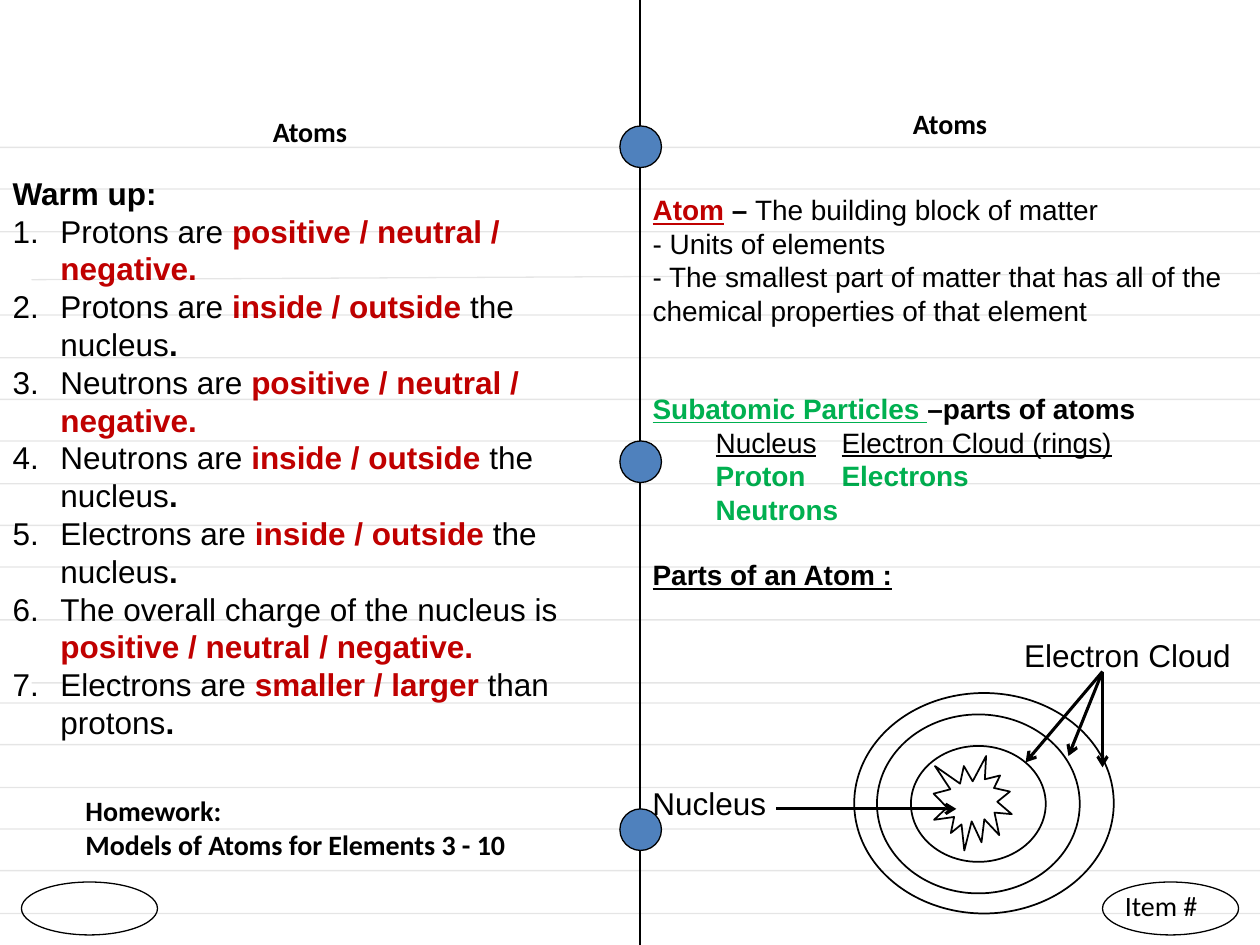
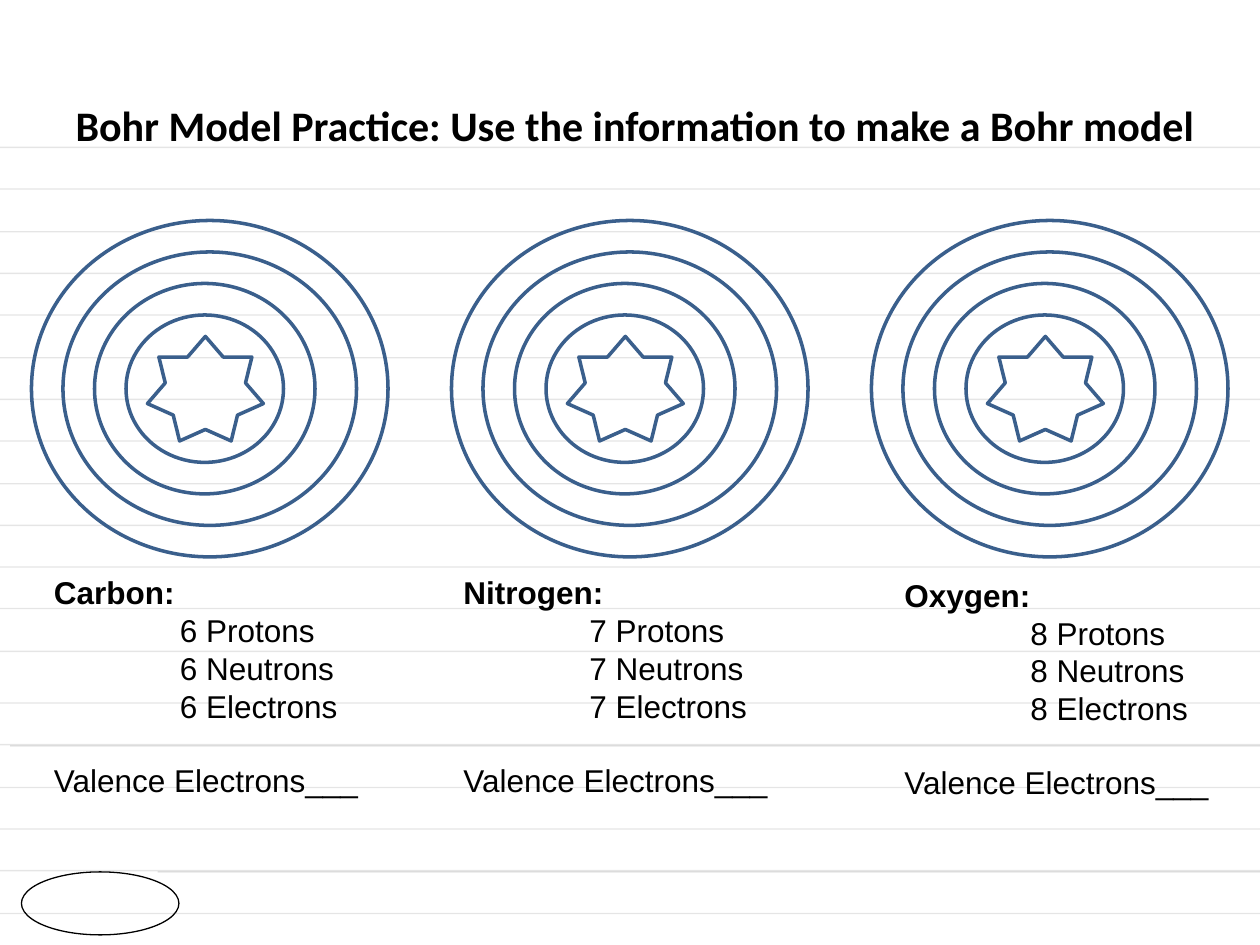
from dataclasses import dataclass

from lxml import etree
from pptx import Presentation
from pptx.dml.color import RGBColor
from pptx.enum import shapes, text
from pptx.oxml import ns
from pptx.util import Inches, Pt


@dataclass(frozen=True)
class Theme:
    ink: str = "000000"
    red: str = "C00000"
    green: str = "00B050"
    hole: str = "4F81BD"
    ring: str = "3A5F8C"
    head: str = "Calibri"
    body: str = "Arial"
    small: int = 16
    large: int = 18
    title: int = 24
    leading: float = 1.15
    thin: float = 0.75


T = Theme()
OVAL = shapes.MSO_SHAPE.OVAL
MID = text.PP_ALIGN.CENTER

# Marks on a run: b bold, u underlined, r red, g green.
# A paragraph is (runs, options); gap counts the blank lines above it.
CHARGE = ("positive / neutral / negative.", "br")
PLACE = [("inside / outside ", "br"), ("the nucleus", ""), (".", "b")]
QUIZ = [
    [("Protons are ", ""), CHARGE],
    [("Protons are ", ""), *PLACE],
    [("Neutrons are ", ""), CHARGE],
    [("Neutrons are ", ""), *PLACE],
    [("Electrons are ", ""), *PLACE],
    [("The overall charge of the nucleus is ", ""), CHARGE],
    [("Electrons are ", ""), ("smaller / larger ", "br"),
     ("than protons", ""), (".", "b")],
]
WARMUP = [([("Warm up:", "b")], {})] + [(q, {"number": True}) for q in QUIZ]
NOTES = [
    ([("Atom", "bur"), (" ", "b"), ("– ", "b"),
      ("The building block of matter", "")], {}),
    ([("- Units of elements", "")], {}),
    ([("- The smallest part of matter that has all of the chemical "
       "properties of that element", "")], {}),
    ([("Subatomic Particles ", "bug"), ("–parts of atoms", "b")], {"gap": 2}),
    ([("\t", ""), ("Nucleus", "u"), ("\t", ""),
      ("Electron Cloud (rings)", "u")], {"tabs": (0.31, 2.06)}),
    ([("\tProton\tElectrons", "bg")], {"tabs": (0.31, 3.0)}),
    ([("\tNeutrons", "bg")], {"tabs": (0.37,)}),
    ([("Parts of an Atom :", "bu")], {"gap": 1}),
]
HOMEWORK = [([("Homework:", "b")], {}),
            ([("Models of Atoms for Elements 3 - 10", "b")], {})]
PRACTICE = "Bohr Model Practice: Use the information to make a Bohr model"

# Name, particles of each kind, left and top of the caption
ELEMENTS = [("Carbon", 6, 0.33, 4.5), ("Nitrogen", 7, 3.58, 4.5),
            ("Oxygen", 8, 7.08, 4.52)]
PARTS = ["Protons", "Neutrons", "Electrons"]

# Notebook rules: evenly spaced rows, and the rows that stray on each slide
STEP = 1 / 3
ROWS = [round(1.17 + n * STEP, 2) for n in range(11)]
ROWS += [round(5.58 + n * STEP, 2) for n in range(6)]
STRAY_NOTES = {2.17: (0.25, 2.22, 10, 2.17), 4.92: (0, 4.92, 10, 4.92),
               5.42: (0.25, 5.42, 10, 5.42)}
STRAY_BOHR = {3.5: (0, 3.5, 9.92, 3.5), 4.83: (0, 4.83, 10, 4.83),
              5.17: (0, 5.17, 10, 5.17), 5.92: (0.08, 5.92, 10, 5.92),
              6.92: (1.25, 6.92, 10, 6.92)}
HOLES = [1, 3.5, 6.42]

ATOM = [(shapes.MSO_SHAPE.EXPLOSION1, (7.41, 6, 0.62, 0.75)),
        (OVAL, (6.96, 5.67, 1.61, 1.42)),
        (OVAL, (7.23, 5.92, 1.07, 0.92)),
        (OVAL, (6.78, 5.5, 2.06, 1.75))]
ARROWS = [(6.16, 6.42, 7.59, 6.42), (8.75, 5.33, 8.14, 6.05),
          (8.75, 5.33, 8.48, 6), (8.75, 5.33, 8.75, 6.09)]
LABELS = [("Nucleus", (5.08, 6.17, 1.16, 0.42)),
          ("Electron Cloud", (8.03, 5, 1.97, 0.4))]

# Inset from the outer ring, width, height
RINGS = [(0.75, 1.25, 1.17), (0.5, 1.75, 1.67),
         (0.25, 2.33, 2.17), (0, 2.83, 2.67)]


def rgb(code):
    return RGBColor.from_string(code)


def plain(words, marks=""):
    return [([(words, marks)], {})]


def write(box, paras, size, font, align=None, left=0):
    """Fill a text box or placeholder, top-anchored, with marked-up paragraphs."""
    frame = box.text_frame
    frame.word_wrap = True
    frame.auto_size = text.MSO_AUTO_SIZE.NONE
    frame.vertical_anchor = text.MSO_ANCHOR.TOP
    for n, (runs, opts) in enumerate(paras):
        para = frame.add_paragraph() if n else frame.paragraphs[0]
        para.alignment = align
        para.space_before = Pt(opts.get("gap", 0) * size * T.leading)
        set_list(para, opts, left)
        for words, marks in runs:
            run = para.add_run()
            run.text = words
            face = run.font
            face.name, face.size = font, Pt(size)
            face.bold, face.underline = "b" in marks, "u" in marks
            face.color.rgb = rgb(T.red if "r" in marks else
                                 T.green if "g" in marks else T.ink)


def set_list(para, opts, left):
    """Set indent, numbering and tab stops."""
    prop = para._p.get_or_add_pPr()
    number = opts.get("number", False)
    hang = 0.38 if number else 0
    prop.set("marL", str(Inches(opts.get("left", left) + hang)))
    prop.set("indent", str(Inches(-hang)))
    if number:
        etree.SubElement(prop, ns.qn("a:buAutoNum"), type="arabicPeriod")
    else:
        etree.SubElement(prop, ns.qn("a:buNone"))
    if "tabs" in opts:
        tabs = etree.SubElement(prop, ns.qn("a:tabLst"))
        for stop in opts["tabs"]:
            etree.SubElement(tabs, ns.qn("a:tab"),
                             pos=str(Inches(stop)), algn="l")


def place(item, at):
    item.left, item.top, item.width, item.height = map(Inches, at)
    return item


def label(tree, at, paras, size, font, **more):
    box = tree.add_textbox(*map(Inches, at))
    write(box, paras, size, font, **more)


def shape(tree, kind, at, color=T.ink, width=T.thin, fill=None):
    item = tree.add_shape(kind, *map(Inches, at))
    item.shadow.inherit = False
    item.line.color.rgb = rgb(color)
    item.line.width = Pt(width)
    if fill:
        item.fill.solid()
        item.fill.fore_color.rgb = rgb(fill)
    else:
        item.fill.background()


def line(tree, ends, width=T.thin, faint=False, arrow=False):
    item = tree.add_connector(shapes.MSO_CONNECTOR.STRAIGHT,
                              *map(Inches, ends))
    item.line.color.rgb = rgb(T.ink)
    item.line.width = Pt(width)
    stroke = item.line._get_or_add_ln()
    if faint:
        etree.SubElement(stroke.find(".//" + ns.qn("a:srgbClr")),
                         ns.qn("a:alpha"), val="10000")
    if arrow:
        etree.SubElement(stroke, ns.qn("a:tailEnd"), type="arrow")
    etree.SubElement(item._element.spPr, ns.qn("a:effectLst"))


def rule(tree, stray):
    """Draw the faint notebook lines."""
    for row in sorted({*ROWS, *stray}):
        line(tree, stray.get(row, (0, row, 10, row)), faint=True)


def draw_atom(tree):
    for kind, at in ATOM:
        shape(tree, kind, at, width=1)
    for ends in ARROWS:
        line(tree, ends, width=1.75, arrow=True)
    for words, at in LABELS:
        label(tree, at, plain(words), T.large, T.body)


def draw_bohr(tree, left, top=1.75):
    for inset, wide, high in RINGS:
        shape(tree, OVAL, (left + inset, top + inset, wide, high), T.ring, 2)
    shape(tree, shapes.MSO_SHAPE.STAR_7_POINT,
          (left + 0.92, top + 0.92, 0.92, 0.83), T.ring, 2)


def add_notes(deck):
    slide = deck.slides.add_slide(deck.slide_layouts[3])
    tree = slide.shapes
    title, quiz, notes = slide.placeholders
    heading = plain("Atoms", "b")
    write(place(title, (-0.33, 0.86, 5.58, 0.37)), heading,
          T.small, T.head, align=MID)
    write(place(quiz, (0, 1.33, 5, 4.95)), WARMUP, T.large, T.body)
    write(place(notes, (5.08, 1.48, 4.92, 3.33)), NOTES, T.small, T.body)
    rule(tree, STRAY_NOTES)
    line(tree, (5.08, 0, 5.08, 7.5))
    for top in HOLES:
        shape(tree, OVAL, (4.92, top, 0.33, 0.33), fill=T.hole)
    for left in (0.17, 8.75):
        shape(tree, OVAL, (left, 7, 1.08, 0.42))
    label(tree, (8.83, 7, 1, 0.37), plain("Item #"), T.small, T.head)
    label(tree, (4.83, 0.8, 4.92, 0.37), heading, T.small, T.head,
          align=MID, left=0.5)
    label(tree, (0.58, 6.25, 4.08, 0.64), HOMEWORK, T.small, T.head)
    draw_atom(tree.add_group_shape().shapes)


def add_bohr(deck):
    slide = deck.slides.add_slide(deck.slide_layouts[5])
    tree = slide.shapes
    write(place(tree.title, (0, 0.74, 10.08, 0.51)), plain(PRACTICE, "b"),
          T.title, T.head, align=MID)
    rule(tree, STRAY_BOHR)
    shape(tree, OVAL, (0.17, 6.92, 1.25, 0.5))
    for n, (name, count, left, top) in enumerate(ELEMENTS):
        draw_bohr(tree.add_group_shape().shapes, 0.25 + n * 10 / 3)
        paras = plain(name + ":", "b")
        paras += [([(f"{count} {part}", "")], {"left": 1}) for part in PARTS]
        paras += [([("Valence Electrons___", "")], {"gap": 1})]
        label(tree, (left, top, 2.67, 1.92), paras, T.large, T.body)


def main():
    deck = Presentation()
    deck.slide_width, deck.slide_height = Inches(10), Inches(7.5)
    add_notes(deck)
    add_bohr(deck)
    deck.save("out.pptx")


if __name__ == "__main__":
    main()
